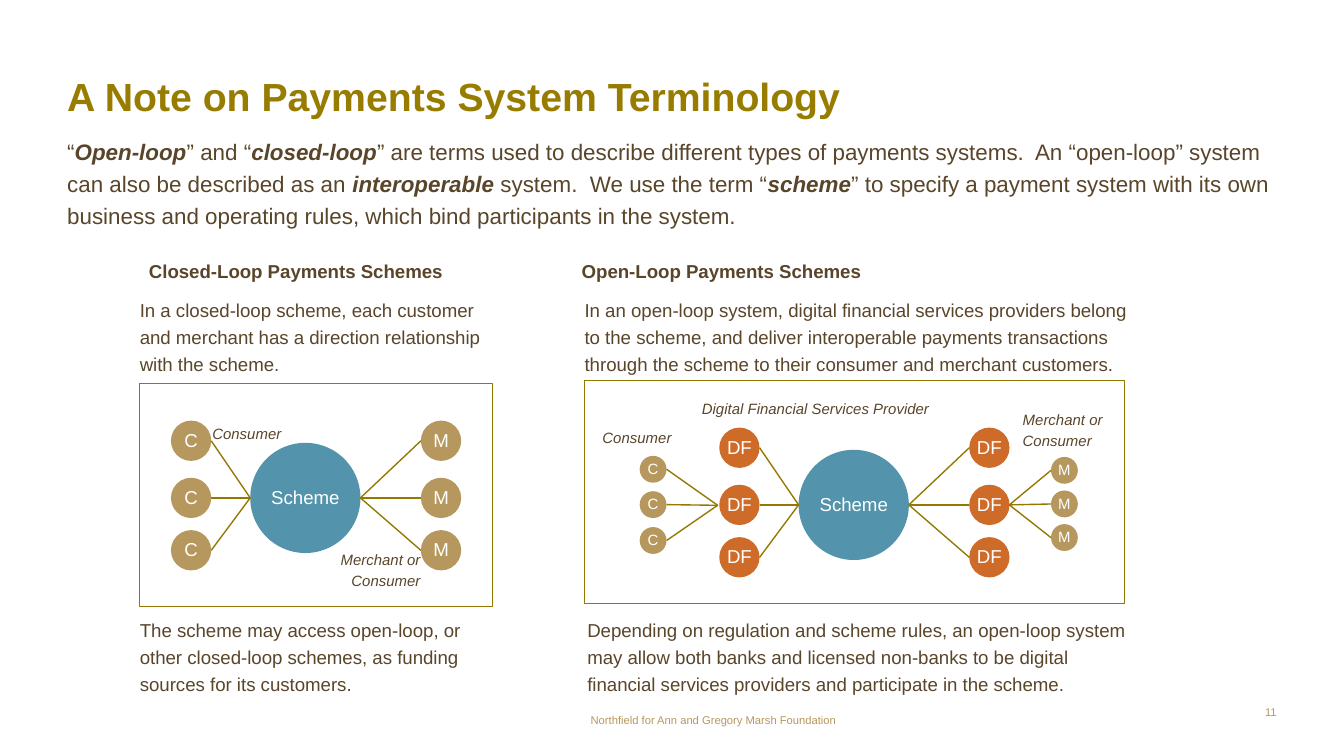
from lxml.etree import SubElement
from pptx import Presentation
from pptx.dml.color import RGBColor
from pptx.enum.shapes import MSO_CONNECTOR, MSO_SHAPE
from pptx.enum.text import MSO_ANCHOR, MSO_AUTO_SIZE, PP_ALIGN
from pptx.oxml.ns import qn
from pptx.util import Inches, Pt

# The slide is a grid of 100 columns; rows have the same pitch
CELL = 0.1
COLORS = {
    "title": "977C00",
    "body": "59452A",
    "rule": "947900",
    "customer": "B6985E",
    "provider": "CE6B29",
    "scheme": "5393AB",
    "label": "FFFFFF",
}
FONT = "Arial"

# Distances from the centre of a scheme to its members, in cells
MEMBER_ROWS = (-4.25, 0, 3.9)
LEFT_COL, RIGHT_COL = -8.5, 10.1
SCHEME_SIZE, MEMBER_SIZE, CUSTOMER_SIZE = 8.2, 3, 2


def cells(*counts):
    return [Inches(count * CELL) for count in counts]


def color(name):
    return RGBColor.from_string(COLORS[name])


def write(frame, text, size=10, ink="body", bold=False, italic=False,
          align=PP_ALIGN.LEFT, spacing=1.2, anchor=MSO_ANCHOR.TOP,
          inset=(0, 0.5), wrap=True):
    """Fill a text frame; parts between asterisks are bold italic."""
    frame.auto_size = MSO_AUTO_SIZE.NONE
    frame.word_wrap = wrap
    frame.vertical_anchor = anchor
    frame.margin_left = frame.margin_right = cells(inset[0])[0]
    frame.margin_top = frame.margin_bottom = cells(inset[1])[0]
    paragraph = frame.paragraphs[0]
    paragraph.alignment = align
    paragraph.line_spacing = spacing
    paragraph.space_before = Pt(0)
    for index, part in enumerate(text.split("*")):
        stressed = index % 2 == 1
        run = paragraph.add_run()
        run.text = part
        run.font.name = FONT
        run.font.size = Pt(size)
        run.font.bold = bold or stressed
        run.font.italic = italic or stressed
        run.font.color.rgb = color(ink)


def caption(slide, box, text, **style):
    write(slide.shapes.add_textbox(*cells(*box)).text_frame, text, **style)


def fill_placeholder(holder, box, text, **style):
    holder.left, holder.top, holder.width, holder.height = cells(*box)
    properties = holder.text_frame.paragraphs[0]._p.get_or_add_pPr()
    properties.set("marL", "0")
    properties.set("indent", "0")
    SubElement(properties, qn("a:buNone"))
    write(holder.text_frame, text, inset=(0, 0), **style)


def circle(slide, col, row, diameter, fill, text, size=10):
    """Draw a labelled circle around a centre."""
    disc = slide.shapes.add_shape(
        MSO_SHAPE.OVAL,
        *cells(col - diameter / 2, row - diameter / 2, diameter, diameter))
    disc.shadow.inherit = False
    disc.fill.solid()
    disc.fill.fore_color.rgb = color(fill)
    disc.line.fill.background()
    write(disc.text_frame, text, size=size, ink="label",
          align=PP_ALIGN.CENTER, spacing=0.95, anchor=MSO_ANCHOR.MIDDLE)


def link(slide, start, end):
    line = slide.shapes.add_connector(
        MSO_CONNECTOR.STRAIGHT, *cells(*start, *end))
    line.line.color.rgb = color("rule")
    line.line.width = Pt(0.75)
    SubElement(line._element.spPr, qn("a:effectLst"))


def fan(slide, apex, col, rows, diameter, fill, text, size=10):
    """Draw a column of circles, each linked to the apex."""
    side = 1 if col < apex[0] else -1
    for row in rows:
        circle(slide, col, row, diameter, fill, text, size)
        link(slide, apex, (col + side * diameter / 2, row))


def scheme(slide, col, row, fill, left_text, right_text):
    """Draw a scheme with its members on both sides."""
    circle(slide, col, row, SCHEME_SIZE, "scheme", "Scheme")
    rows = [row + offset for offset in MEMBER_ROWS]
    for side, offset, text in ((-1, LEFT_COL, left_text),
                               (1, RIGHT_COL, right_text)):
        apex = (col + side * SCHEME_SIZE / 2, row)
        fan(slide, apex, col + offset, rows, MEMBER_SIZE, fill, text)


def panel(slide, box):
    border = slide.shapes.add_shape(MSO_SHAPE.RECTANGLE, *cells(*box))
    border.shadow.inherit = False
    border.fill.background()
    border.line.color.rgb = color("rule")
    border.line.width = Pt(0.5)


def main():
    # Widescreen slide, 16 to 9
    deck = Presentation()
    deck.slide_width = Inches(10)
    deck.slide_height = deck.slide_width * 9 // 16
    slide = deck.slides.add_slide(deck.slide_layouts[1])

    # Title and introduction
    fill_placeholder(slide.shapes.title, (5, 5.65, 90, 4.2),
                     "A Note on Payments System Terminology",
                     size=21, ink="title", bold=True, spacing=0.95, wrap=False)
    fill_placeholder(
        slide.placeholders[1], (5, 9.88, 90, 5.8),
        "“*Open-loop*” and “*closed-loop*” are terms used to describe "
        "different types of payments systems.  An “open-loop” system can also "
        "be described as an *interoperable* system.  We use the term "
        "“*scheme*” to specify a payment system with its own business and "
        "operating rules, which bind participants in the system.", size=12)

    # Headings
    for col, heading in ((10.1, "Closed-Loop Payments Schemes"),
                         (42.3, "Open-Loop Payments Schemes")):
        caption(slide, (col, 18.85, 25.8, 2.7), heading, bold=True,
                spacing=1, inset=(1, 0.5))

    # Explanations above and below the diagrams
    for col, row, width, text in (
        (10.4, 21.43, 25.8,
         "In a closed-loop scheme, each customer and merchant has a direction "
         "relationship with the scheme."),
        (10.4, 45.25, 25.8,
         "The scheme may access open-loop, or other closed-loop schemes, as "
         "funding sources for its customers."),
        (43.5, 21.43, 40.6,
         "In an open-loop system, digital financial services providers belong "
         "to the scheme, and deliver interoperable payments transactions "
         "through the scheme to their consumer and merchant customers."),
        (43.7, 45.25, 40.6,
         "Depending on regulation and scheme rules, an open-loop system may "
         "allow both banks and licensed non-banks to be digital financial "
         "services providers and participate in the scheme."),
    ):
        caption(slide, (col, row, width, 6.9), text)

    # Closed-loop diagram
    scheme(slide, 22.72, 37.05, "customer", "C", "M")

    # Open-loop diagram: providers, then their customers
    scheme(slide, 63.52, 37.57, "provider", "DF", "DF")
    fan(slide, (53.4, 37.6), 48.6, (34.92, 37.55, 40.22),
        CUSTOMER_SIZE, "customer", "C", size=8)
    fan(slide, (75.1, 37.57), 79.2, (35, 37.5, 40),
        CUSTOMER_SIZE, "customer", "M", size=8)

    # Diagram labels
    for box, text, align in (
        ((15.8, 30.85, 6.6, 2.5), "Consumer", PP_ALIGN.LEFT),
        ((24.7, 40.2, 6.6, 4.1), "Merchant or Consumer", PP_ALIGN.RIGHT),
        ((52.23, 29, 17.6, 2.5), "Digital Financial Services Provider",
         PP_ALIGN.LEFT),
        ((44.83, 31.15, 6.6, 2.5), "Consumer", PP_ALIGN.LEFT),
        ((76.1, 29.8, 6.6, 4.1), "Merchant or Consumer", PP_ALIGN.LEFT),
    ):
        caption(slide, box, text, size=8, italic=True, align=align)

    # Diagram borders
    panel(slide, (43.5, 28.3, 40.2, 16.6))
    panel(slide, (10.4, 28.5, 26.24, 16.62))

    # Footer and page number
    for box, text in (
        ((43.4, 53.1, 18.8, 1),
         "Northfield for Ann and Gregory Marsh Foundation"),
        ((94, 52.5, 1, 1), "11"),
    ):
        caption(slide, box, text, size=6, ink="customer", spacing=1,
                align=PP_ALIGN.RIGHT, inset=(0, 0), wrap=False)

    deck.save("out.pptx")


if __name__ == "__main__":
    main()
